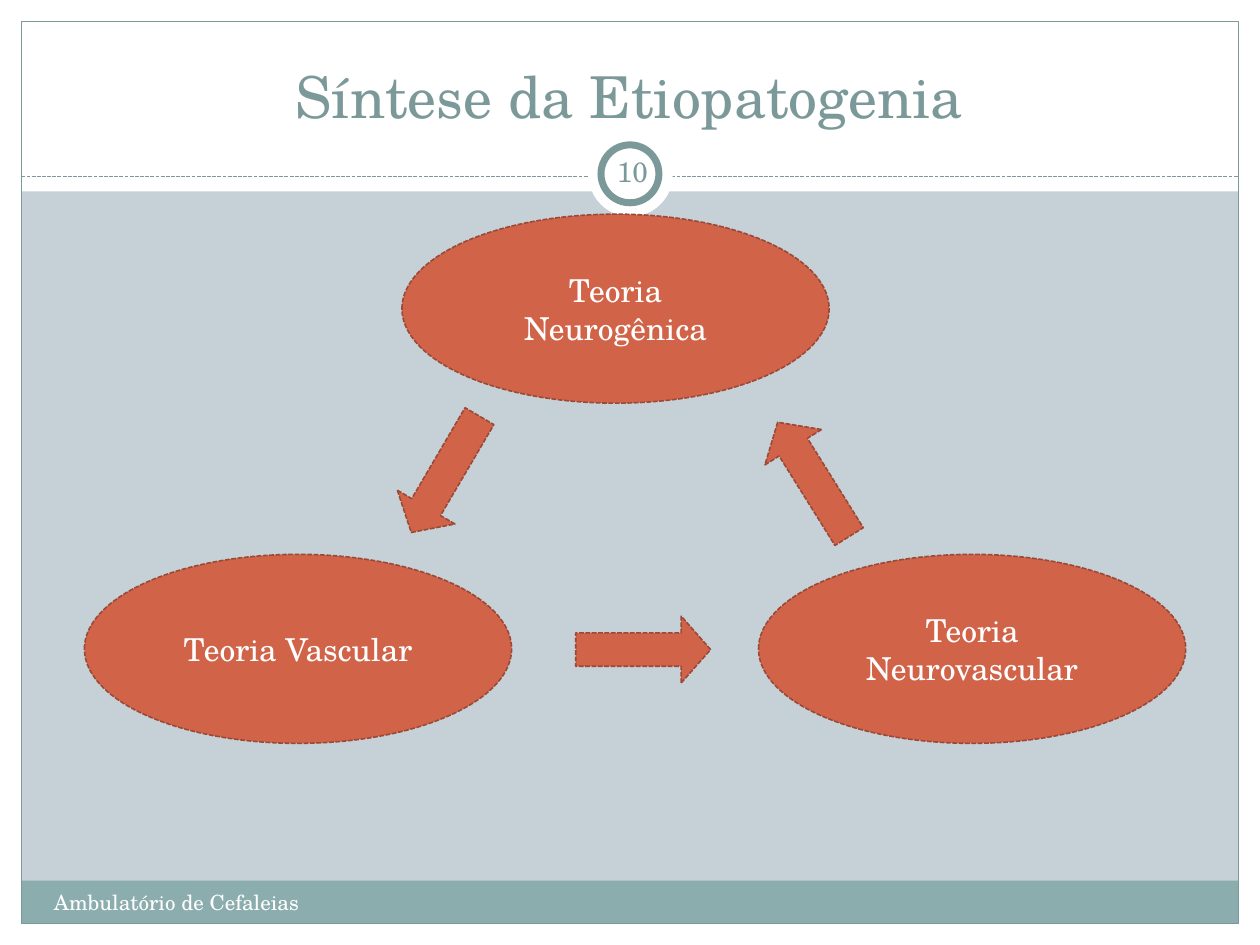
from lxml.etree import SubElement
from pptx import Presentation
from pptx.dml.color import RGBColor
from pptx.enum.dml import MSO_LINE
from pptx.enum.shapes import MSO_CONNECTOR, MSO_SHAPE
from pptx.enum.text import MSO_ANCHOR, PP_ALIGN
from pptx.oxml.ns import qn
from pptx.util import Inches, Pt

FONT = "TeX Gyre Schola"
WHITE, TEAL, BAND, PALE = "FFFFFF", "7C999A", "8CADAE", "C5D1D7"
RUST, BROWN = "D16349", "9B4936"
W, H, EDGE = 10, 7.5, 0.17


def rgb(value):
    return RGBColor.from_string(value)


class Deck:
    def __init__(self):
        self.prs = Presentation()
        self.prs.slide_width, self.prs.slide_height = Inches(W), Inches(H)
        self.s = self.prs.slides.add_slide(self.prs.slide_layouts[5])
        fill = self.s.background.fill
        fill.solid()
        fill.fore_color.rgb = rgb(PALE)

    def stroke(self, line, color, width, dashed=False):
        line.color.rgb = rgb(color)
        line.width = Pt(width)
        if dashed:
            line.dash_style = MSO_LINE.SQUARE_DOT

    def shape(self, kind, box, fill=None, line=None):
        sp = self.s.shapes.add_shape(kind, *map(Inches, box))
        sp.shadow.inherit = False
        if fill:
            sp.fill.solid()
            sp.fill.fore_color.rgb = rgb(fill)
        else:
            sp.fill.background()
        if line:
            self.stroke(sp.line, *line)
        else:
            sp.line.fill.background()
        return sp

    def rule(self, x1, x2, y):
        c = self.s.shapes.add_connector(MSO_CONNECTOR.STRAIGHT, *map(Inches, (x1, y, x2, y)))
        self.stroke(c.line, TEAL, 0.75, True)
        SubElement(c.element.spPr, qn("a:effectLst"))

    def set_text(self, sp, text, size, color, align=PP_ALIGN.CENTER, **frame):
        tf = sp.text_frame
        for name, value in {"word_wrap": True, "vertical_anchor": MSO_ANCHOR.MIDDLE, **frame}.items():
            setattr(tf, name, value)
        p = tf.paragraphs[0]
        p.alignment = align
        r = p.add_run()
        r.text = text
        for name, value in {"name": FONT, "size": Pt(size)}.items():
            setattr(r.font, name, value)
        r.font.color.rgb = rgb(color)

    def text_box(self, box, *args, **frame):
        self.set_text(self.s.shapes.add_textbox(*map(Inches, box)), *args, **frame)

    def title(self, box, text):
        sp = self.s.shapes.title
        sp.left, sp.top, sp.width, sp.height = map(Inches, box)
        self.set_text(sp, text, 33, TEAL, vertical_anchor=MSO_ANCHOR.BOTTOM)
        # bring the title in front of the white header band
        sp.element.getparent().append(sp.element)

    def theory(self, x, y, text):
        sp = self.shape(MSO_SHAPE.OVAL, (x, y, 3.39, 1.5), RUST, (BROWN, 0.9, True))
        self.set_text(sp, text, 18, WHITE)

    def arrow(self, x, y, angle):
        sp = self.shape(MSO_SHAPE.DOWN_ARROW, (x, y, 0.53, 1.07), RUST, (BROWN, 0.9, True))
        sp.rotation = angle
        sp.adjustments[0], sp.adjustments[1] = 0.5, 0.44


def main():
    deck = Deck()
    inner = W - 2 * EDGE
    margins = [
        (0, H - EDGE, W, EDGE),
        (0, 0, W, 1.52),
        (0, 0, EDGE, H),
        (W - EDGE, 0, EDGE, H),
    ]
    for box in margins:
        deck.shape(MSO_SHAPE.RECTANGLE, box, WHITE)
    deck.shape(MSO_SHAPE.RECTANGLE, (EDGE, 6.99, inner, 0.34), BAND)
    deck.shape(MSO_SHAPE.RECTANGLE, (EDGE, EDGE, inner, H - 2 * EDGE), line=(TEAL, 0.75))
    deck.rule(EDGE, W - EDGE, 1.4)
    deck.shape(MSO_SHAPE.OVAL, (4.67, 1.05, 0.67, 0.67), WHITE)
    deck.shape(MSO_SHAPE.OVAL, (4.77, 1.15, 0.46, 0.46), WHITE, (TEAL, 4))

    deck.title((0.33, 0.25, 9.33, 0.83), "Síntese da Etiopatogenia")

    for x, y, name in [(3.19, 1.7, "Neurogênica"), (0.67, 4.4, "Vascular"), (6.02, 4.4, "Neurovascular")]:
        deck.theory(x, y, f"Teoria {name}")
    for x, y, angle in [(3.27, 3.23, 30.4), (4.84, 4.62, 270), (6.19, 3.27, 148)]:
        deck.arrow(x, y, angle)

    sides = ("left", "top", "right", "bottom")
    insets = {f"margin_{side}": Inches(0.05) for side in sides}
    deck.text_box((4.77, 1.12, 0.5, 0.48), "10", 16, TEAL, **insets)
    deck.text_box((0.33, 7.01, 3.92, 0.4), "Ambulatório de Cefaleias", 12, WHITE,
                  PP_ALIGN.LEFT, vertical_anchor=MSO_ANCHOR.TOP)
    deck.prs.save("out.pptx")


if __name__ == "__main__":
    main()
